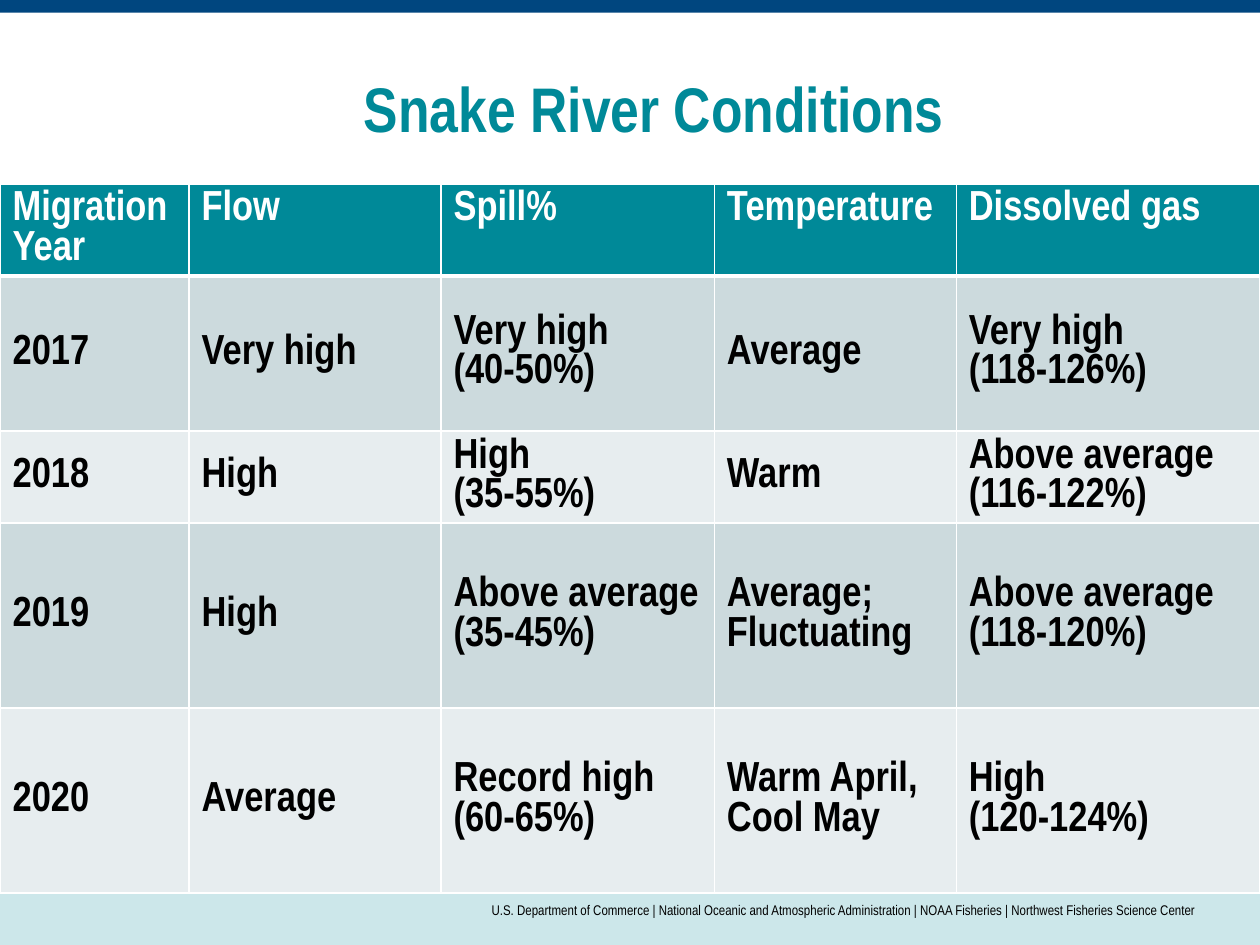
from lxml.etree import SubElement
from pptx import Presentation
from pptx.dml.color import RGBColor
from pptx.enum.shapes import MSO_SHAPE
from pptx.enum.text import MSO_ANCHOR, PP_ALIGN
from pptx.oxml.ns import qn
from pptx.util import Inches, Pt

TEAL = RGBColor(0x00, 0x89, 0x98)
NAVY = RGBColor(0x00, 0x46, 0x7F)
PALE = RGBColor(0xCC, 0xE7, 0xEA)
DARK = RGBColor(0xCC, 0xDA, 0xDD)
LIGHT = RGBColor(0xE7, 0xED, 0xEF)
WHITE = RGBColor(0xFF, 0xFF, 0xFF)
BLACK = RGBColor(0x00, 0x00, 0x00)

WIDE, HIGH = 10, 7.5
BAR = 0.1
FOOT = 0.55
COLS = [1.5, 2, 2.17, 1.92, 2.41]
ROWS = [0.73, 1.23, 0.73, 1.47, 1.47]
TOP = 1.46

DATA = [
    ["Migration\nYear", "Flow", "Spill%", "Temperature", "Dissolved gas"],
    ["2017", "Very high", "Very high\n(40-50%)", "Average", "Very high\n(118-126%)"],
    ["2018", "High", "High\n(35-55%)", "Warm", "Above average\n(116-122%)"],
    ["2019", "High", "Above average\n(35-45%)", "Average;\nFluctuating",
     "Above average\n(118-120%)"],
    ["2020", "Average", "Record high\n(60-65%)", "Warm April,\nCool May",
     "High\n(120-124%)"],
]


def write(frame, text, size, color, bold, align):
    frame.text = text
    for para in frame.paragraphs:
        para.alignment = align
        for run in para.runs:
            font = run.font
            font.name, font.size, font.bold = "Arial Narrow", Pt(size), bold
            font.color.rgb = color


def rule(cell, side, points):
    props = cell._tc.get_or_add_tcPr()
    line = SubElement(props, qn("a:" + side), w=str(Pt(points)))
    fill = SubElement(line, qn("a:solidFill"))
    SubElement(fill, qn("a:srgbClr"), val=str(WHITE))


deck = Presentation()
deck.slide_width, deck.slide_height = Inches(WIDE), Inches(HIGH)
slide = deck.slides.add_slide(deck.slide_layouts[6])
shapes = slide.shapes

# Bands at the foot and the top
for top, tall, color in [(HIGH - FOOT, FOOT, PALE), (0, BAR, NAVY)]:
    band = shapes.add_shape(MSO_SHAPE.RECTANGLE, 0, Inches(top),
                            Inches(WIDE), Inches(tall))
    band.shadow.inherit = False
    band.fill.solid()
    band.fill.fore_color.rgb = color
    band.line.fill.background()

# Title
title = shapes.add_textbox(Inches(0.69), Inches(0.48), Inches(9), Inches(0.74))
frame = title.text_frame
frame.word_wrap = True
frame.vertical_anchor = MSO_ANCHOR.MIDDLE
write(frame, "Snake River Conditions", 36, TEAL, True, PP_ALIGN.CENTER)

# Table of conditions
table = shapes.add_table(len(ROWS), len(COLS), 0, Inches(TOP),
                         Inches(sum(COLS)), Inches(sum(ROWS))).table
for col, wide in zip(table.columns, COLS):
    col.width = Inches(wide)
for r, tall in enumerate(ROWS):
    table.rows[r].height = Inches(tall)
    head = r == 0
    fill = TEAL if head else DARK if r % 2 else LIGHT
    for c, text in enumerate(DATA[r]):
        cell = table.cell(r, c)
        for side in ("lnL", "lnR", "lnT", "lnB"):
            thick = (r, side) in [(0, "lnB"), (1, "lnT")]
            rule(cell, side, 3 if thick else 1)
        cell.fill.solid()
        cell.fill.fore_color.rgb = fill
        cell.vertical_anchor = MSO_ANCHOR.TOP if head else MSO_ANCHOR.MIDDLE
        write(cell.text_frame, text, 24, WHITE if head else BLACK, True,
              PP_ALIGN.LEFT)
        # Fixed pitch keeps two lines within the short rows
        for para in cell.text_frame.paragraphs:
            para.line_spacing = Pt(22.5)

# Footer
foot = shapes.add_textbox(Inches(WIDE / 4), Inches(HIGH - FOOT),
                          Inches(WIDE * 0.7), Inches(FOOT))
frame = foot.text_frame
frame.word_wrap = True
frame.vertical_anchor = MSO_ANCHOR.MIDDLE
frame.margin_left = frame.margin_right = 0
write(frame, "U.S. Department of Commerce | National Oceanic and Atmospheric "
      "Administration | NOAA Fisheries | Northwest Fisheries Science Center",
      8, BLACK, False, PP_ALIGN.RIGHT)

deck.save("out.pptx")
